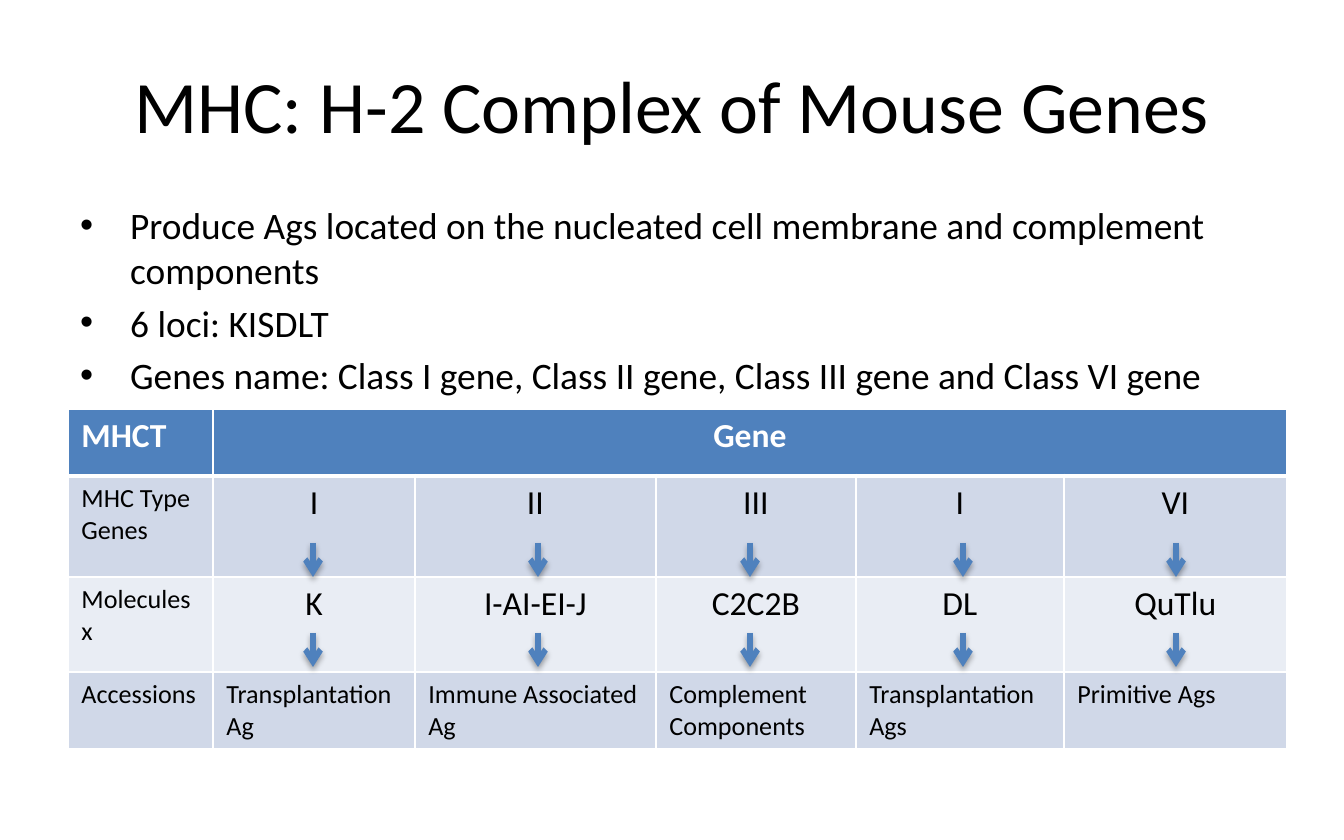
from lxml import etree
from pptx import Presentation
from pptx.dml.color import RGBColor
from pptx.enum.shapes import MSO_CONNECTOR
from pptx.enum.text import MSO_ANCHOR, PP_ALIGN
from pptx.oxml import parse_xml
from pptx.oxml.ns import nsdecls, qn
from pptx.util import Emu, Pt

BLACK = RGBColor(0x00, 0x00, 0x00)
WHITE = RGBColor(0xFF, 0xFF, 0xFF)
BLUE = RGBColor(0x4F, 0x81, 0xBD)
DARK_BAND = RGBColor(0xD0, 0xD8, 0xE8)
LIGHT_BAND = RGBColor(0xE9, 0xED, 0xF4)
FONT = "Calibri"

TITLE = "MHC: H-2 Complex of Mouse Genes"
FACTS = [
    "Produce Ags located on the nucleated cell membrane and complement components",
    "6 loci: KISDLT",
    "Genes name: Class I gene, Class II gene, Class III gene and Class VI gene",
]
GENE_ROWS = [
    ["MHCT", "Gene", "", "", "", ""],
    ["MHC Type Genes", "I", "II", "III", "I", "VI"],
    ["Moleculesx", "K", "I-AI-EI-J", "C2C2B", "DL", "QuTlu"],
    ["Accessions", "Transplantation Ag", "Immune Associated Ag",
     "Complement Components", "Transplantation Ags", "Primitive Ags"],
]
ROW_FILLS = [BLUE, DARK_BAND, LIGHT_BAND, DARK_BAND]
ROW_HEIGHTS = [67, 101, 95, 77]
COLUMN_WIDTHS = [145, 202, 241, 200, 208, 223]
ARROW_CENTERS = [313, 538, 750, 963, 1176]
ARROW_TOPS = [543, 633]
ARROW_LENGTH = 34


def px(length):
    return Emu(round(length * 914400 / 134.4))


def format_runs(paragraph, size, color=BLACK, bold=False):
    for run in paragraph.runs:
        run.font.name = FONT
        run.font.size = Pt(size)
        run.font.color.rgb = color
        run.font.bold = bold


def add_text_frame(slide, left, top, width, height):
    frame = slide.shapes.add_textbox(px(left), px(top), px(width), px(height)).text_frame
    frame.word_wrap = True
    return frame


def add_title(slide):
    frame = add_text_frame(slide, 67, 34, 1210, 140)
    frame.vertical_anchor = MSO_ANCHOR.MIDDLE
    frame.text = TITLE
    frame.paragraphs[0].alignment = PP_ALIGN.CENTER
    format_runs(frame.paragraphs[0], 39.6)


def add_facts(slide):
    frame = add_text_frame(slide, 67, 196, 1153, 224)
    frame.text = "\n".join(FACTS)
    for paragraph in frame.paragraphs:
        paragraph.space_before = Pt(4)
        format_runs(paragraph, 20)
        properties = paragraph._p.get_or_add_pPr()
        properties.set("marL", str(px(50)))
        properties.set("indent", str(-px(50)))
        bullet_font = etree.SubElement(properties, qn("a:buFont"))
        bullet_font.set("typeface", "Arial")
        etree.SubElement(properties, qn("a:buChar")).set("char", "•")


def add_borders(cell, top, bottom):
    """Draw white borders; call before the fill is set, as the schema puts lines first."""
    properties = cell._tc.get_or_add_tcPr()
    for side, points in (("L", 1), ("R", 1), ("T", top), ("B", bottom)):
        properties.append(parse_xml(
            f'<a:ln{side} {nsdecls("a")} w="{Pt(points)}"><a:solidFill>'
            f'<a:srgbClr val="{WHITE}"/></a:solidFill></a:ln{side}>'))


def add_gene_table(slide):
    table = slide.shapes.add_table(
        len(GENE_ROWS), len(COLUMN_WIDTHS), px(68), px(409),
        px(sum(COLUMN_WIDTHS)), px(sum(ROW_HEIGHTS))).table
    for column, width in zip(table.columns, COLUMN_WIDTHS):
        column.width = px(width)
    for row, height in zip(table.rows, ROW_HEIGHTS):
        row.height = px(height)
    table.cell(0, 1).merge(table.cell(0, len(COLUMN_WIDTHS) - 1))

    last = len(GENE_ROWS) - 1
    for r, entries in enumerate(GENE_ROWS):
        header = r == 0
        for c, entry in enumerate(entries):
            cell = table.cell(r, c)
            add_borders(cell, top=3 if r == 1 else 1, bottom=3 if header else 1)
            cell.fill.solid()
            cell.fill.fore_color.rgb = ROW_FILLS[r]
            if not entry:
                continue
            cell.text = entry
            paragraph = cell.text_frame.paragraphs[0]
            centered = c > 0 and r < last
            paragraph.alignment = PP_ALIGN.CENTER if centered else PP_ALIGN.LEFT
            format_runs(paragraph, 18 if header or centered else 14,
                        WHITE if header else BLACK, bold=header)


def add_arrow(slide, center, top):
    arrow = slide.shapes.add_connector(
        MSO_CONNECTOR.STRAIGHT, px(center), px(top), px(center), px(top + ARROW_LENGTH))
    arrow.line.color.rgb = BLUE
    arrow.line.width = Pt(3)
    etree.SubElement(arrow.line._get_or_add_ln(), qn("a:tailEnd")).set("type", "arrow")
    arrow._element.spPr.append(parse_xml(
        f'<a:effectLst {nsdecls("a")}><a:outerShdw blurRad="{Pt(3.1)}" dist="{Pt(1.8)}" '
        f'dir="5400000" rotWithShape="0"><a:srgbClr val="{BLACK}">'
        '<a:alpha val="35000"/></a:srgbClr></a:outerShdw></a:effectLst>'))


def main():
    presentation = Presentation()
    presentation.slide_width, presentation.slide_height = px(1344), px(840)
    slide = presentation.slides.add_slide(presentation.slide_layouts[6])
    add_title(slide)
    add_facts(slide)
    add_gene_table(slide)
    for top in ARROW_TOPS:
        for center in ARROW_CENTERS:
            add_arrow(slide, center, top)
    presentation.save("out.pptx")


if __name__ == "__main__":
    main()
